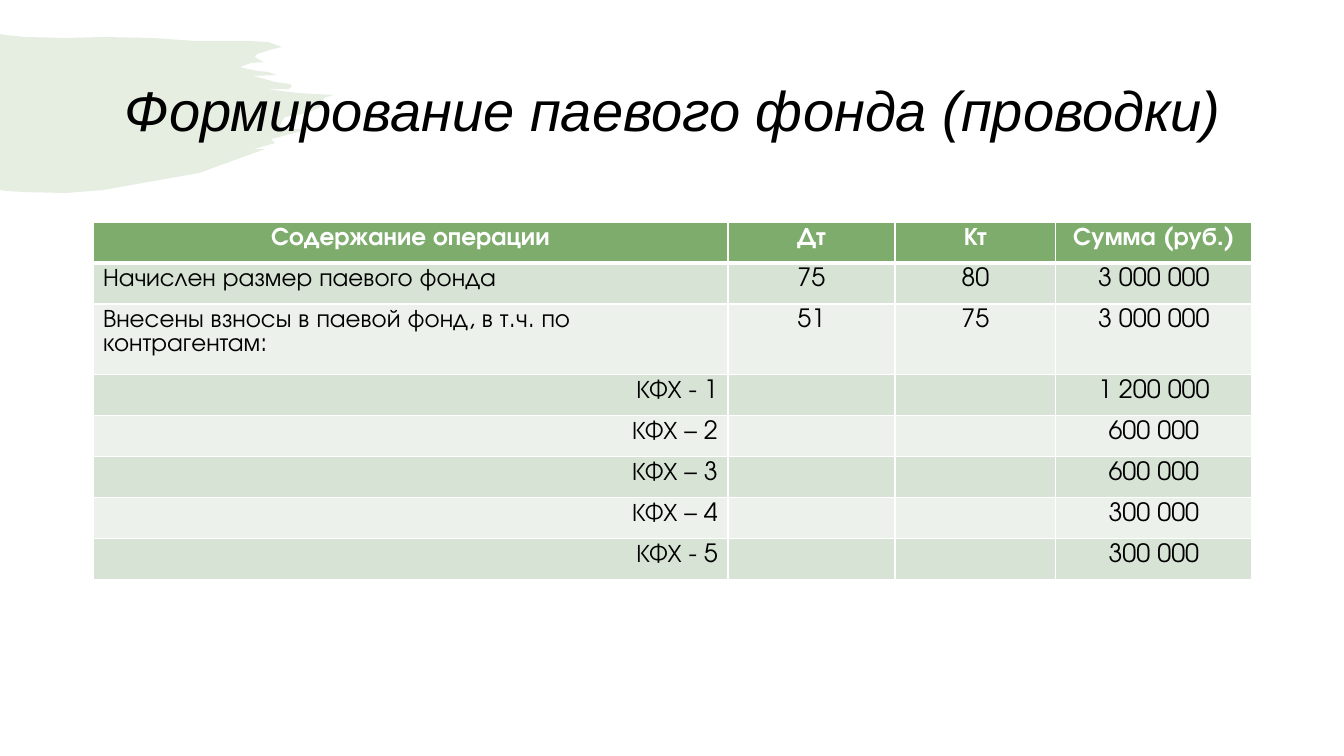
from lxml import etree
from pptx import Presentation
from pptx.dml.color import RGBColor
from pptx.enum.text import MSO_ANCHOR, PP_ALIGN
from pptx.oxml.ns import qn
from pptx.util import Pt

LEFT, CENTER, RIGHT = PP_ALIGN.LEFT, PP_ALIGN.CENTER, PP_ALIGN.RIGHT
MIDDLE = MSO_ANCHOR.MIDDLE
SLIDE_WIDTH, SLIDE_HEIGHT = 1344, 756
SCALE = 12192000 / SLIDE_WIDTH
COLORS = {
    "accent": "7DAC6C",
    "odd_row": "D7E3D4",
    "even_row": "ECF1EB",
    "white": "FFFFFF",
    "black": "000000",
}


def px(length):
    return round(length * SCALE)


def write_text(frame, text, font="TeX Gyre Adventor", size=18, color="black",
               bold=False, italic=False, align=LEFT, spacing=None):
    para = frame.paragraphs[0]
    para.alignment = align
    if spacing:
        para.line_spacing = spacing
    span = para.add_run()
    span.text = text
    span.font.name = font
    span.font.size = Pt(size)
    span.font.bold = bold
    span.font.italic = italic
    span.font.color.rgb = RGBColor.from_string(COLORS[color])


deck = Presentation()
deck.slide_width, deck.slide_height = px(SLIDE_WIDTH), px(SLIDE_HEIGHT)
page = deck.slides.add_slide(deck.slide_layouts[6])

# Brush stroke in the top left corner
stroke_points = [
    (0, 34), (6, 35), (25, 37), (67, 38), (103, 37), (152, 38), (196, 41),
    (250, 41), (268, 42), (282, 47), (273, 49), (257, 54), (255, 57),
    (258, 59), (264, 62), (251, 63), (240, 67), (248, 69), (258, 71),
    (268, 72), (277, 75), (253, 76), (265, 79), (275, 82), (282, 83),
    (290, 84), (292, 86), (289, 89), (286, 89), (265, 89), (298, 93),
    (333, 95), (324, 98), (321, 107), (309, 112), (302, 114), (285, 117),
    (282, 121), (280, 126), (276, 129), (310, 129), (271, 139), (275, 143),
    (254, 149), (265, 149), (199, 173), (103, 190), (66, 193), (23, 192),
    (7, 191), (0, 190),
]
builder = page.shapes.build_freeform(*stroke_points[0], scale=SCALE)
builder.add_line_segments(stroke_points[1:], close=True)
stroke = builder.convert_to_shape()
stroke.shadow.inherit = False
stroke.line.fill.background()
stroke.fill.solid()
stroke.fill.fore_color.rgb = RGBColor.from_string(COLORS["accent"])
stroke_color = stroke.fill._xPr.find(".//" + qn("a:srgbClr"))
etree.SubElement(stroke_color, qn("a:alpha"), val="20000")

# Title
title = page.shapes.add_textbox(px(93), px(40), px(1159), px(146))
title.text_frame.word_wrap = True
title.text_frame.vertical_anchor = MIDDLE
write_text(title.text_frame, "Формирование паевого фонда (проводки)",
           font="Arial", size=40, italic=True, align=CENTER, spacing=0.9)

# Table of postings
column_widths = [635, 167, 161, 196]
row_height = 41
postings = [
    ("Содержание операции", "Дт", "Кт", "Сумма (руб.)"),
    ("Начислен размер паевого фонда", "75", "80", "3 000 000"),
    ("Внесены взносы в паевой фонд, в т.ч. по контрагентам:",
     "51", "75", "3 000 000"),
    ("КФХ - 1", "", "", "1 200 000"),
    ("КФХ – 2", "", "", "600 000"),
    ("КФХ – 3", "", "", "600 000"),
    ("КФХ – 4", "", "", "300 000"),
    ("КФХ - 5", "", "", "300 000"),
]
table = page.shapes.add_table(
    len(postings), len(column_widths), px(93), px(222),
    px(sum(column_widths)), px(row_height * len(postings))).table
for column, width in zip(table.columns, column_widths):
    column.width = px(width)

for row_index, posting in enumerate(postings):
    table.rows[row_index].height = px(row_height)
    is_header = row_index == 0
    row_fill = "accent" if is_header else "odd_row" if row_index % 2 else "even_row"
    borders = {"L": 1, "R": 1, "T": 3 if row_index == 1 else 1,
               "B": 3 if is_header else 1}
    for column_index, text in enumerate(posting):
        cell = table.cell(row_index, column_index)
        cell.fill.solid()
        cell.fill.fore_color.rgb = RGBColor.from_string(COLORS[row_fill])

        # White borders, placed ahead of the fill
        properties = cell._tc.get_or_add_tcPr()
        for position, (side, points) in enumerate(borders.items()):
            border = etree.Element(qn("a:ln" + side), w=str(Pt(points)))
            border_fill = etree.SubElement(border, qn("a:solidFill"))
            etree.SubElement(border_fill, qn("a:srgbClr"), val=COLORS["white"])
            properties.insert(position, border)

        if not text:
            continue
        if is_header or column_index > 0:
            align = CENTER
        else:
            align = RIGHT if text.startswith("КФХ") else LEFT
        write_text(cell.text_frame, text, bold=is_header, align=align,
                   color="white" if is_header else "black")

deck.save("out.pptx")
